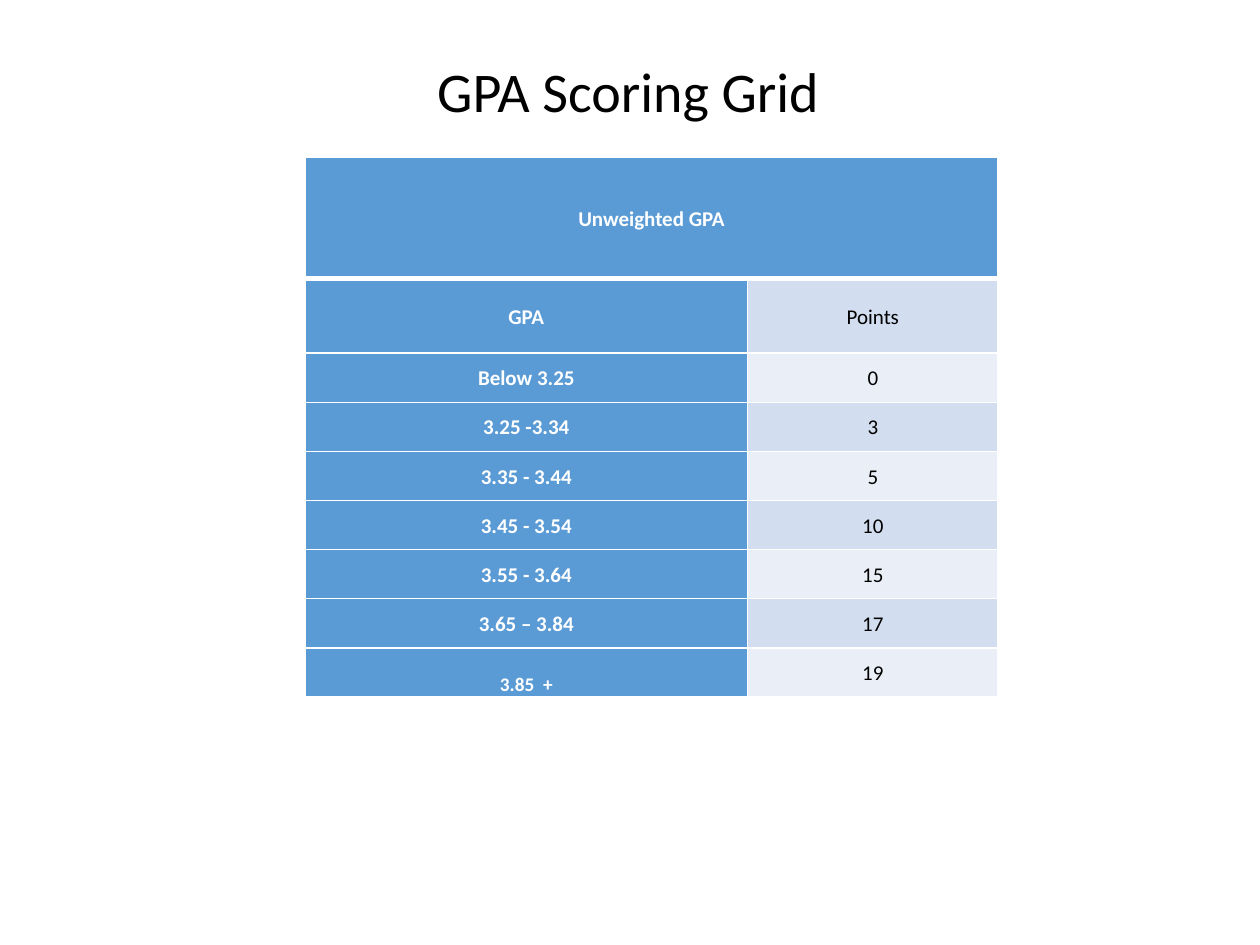
from lxml import etree
from pptx import Presentation, util as u
from pptx.dml.color import RGBColor
from pptx.enum import text
from pptx.oxml import ns

TITLE = "GPA Scoring Grid"
HEAD = "Unweighted GPA"
ROWS = [
    ("GPA", "Points"),
    ("Below 3.25", "0"),
    ("3.25 -3.34", "3"),
    ("3.35 - 3.44", "5"),
    ("3.45 - 3.54", "10"),
    ("3.55 - 3.64", "15"),
    ("3.65 – 3.84", "17"),
    ("3.85  +", "19"),
]
FONT = "Calibri"
BLACK = RGBColor(0, 0, 0)
WHITE = RGBColor(255, 255, 255)
BLUE = RGBColor(0x5B, 0x9B, 0xD5)
BANDS = [RGBColor(0xD2, 0xDE, 0xEF), RGBColor(0xEA, 0xEF, 0xF7)]
WIDTHS = [8.92, 5.05]
HEIGHTS = [2.44, 1.5] + [0.99] * (len(ROWS) - 1)


def write(frame, words, size, color, bold=False):
    par = frame.paragraphs[0]
    par.alignment = text.PP_ALIGN.CENTER
    run = par.add_run()
    run.text = words
    font = run.font
    font.name, font.size, font.bold = FONT, u.Pt(size), bold
    font.color.rgb = color
    return par


def border(cell, top=1, bottom=1):
    props = cell._tc.get_or_add_tcPr()
    sides = [("lnL", 1), ("lnR", 1), ("lnT", top), ("lnB", bottom)]
    for spot, (side, width) in enumerate(sides):
        line = etree.Element(ns.qn("a:" + side), w=str(u.Pt(width)))
        fill = etree.SubElement(line, ns.qn("a:solidFill"))
        etree.SubElement(fill, ns.qn("a:srgbClr"), val=str(WHITE))
        props.insert(spot, line)


def style(cell, words, fill, color, bold, size=12, top=1, bottom=1):
    cell.fill.solid()
    cell.fill.fore_color.rgb = fill
    cell.margin_left = cell.margin_right = u.Cm(0.18)
    cell.margin_top = cell.margin_bottom = 0
    cell.vertical_anchor = text.MSO_ANCHOR.MIDDLE
    par = write(cell.text_frame, words, size, color, bold)
    par.line_spacing = 1.07
    border(cell, top, bottom)


def main():
    prs = Presentation()
    prs.slide_width, prs.slide_height = u.Cm(25.4), u.Cm(19.05)
    slide = prs.slides.add_slide(prs.slide_layouts[5])

    title = slide.shapes.title
    title.left, title.top = u.Cm(1.55), u.Cm(1.02)
    title.width, title.height = u.Cm(22.23), u.Cm(1.63)
    title.text_frame.vertical_anchor = text.MSO_ANCHOR.TOP
    write(title.text_frame, TITLE, 32, BLACK)

    frame = slide.shapes.add_table(
        len(HEIGHTS), len(WIDTHS), u.Cm(6.15), u.Cm(3.18),
        u.Cm(sum(WIDTHS)), u.Cm(sum(HEIGHTS)))
    grid = frame.table
    for col, width in zip(grid.columns, WIDTHS):
        col.width = u.Cm(width)
    for row, height in zip(grid.rows, HEIGHTS):
        row.height = u.Cm(height)

    head = grid.cell(0, 0)
    head.merge(grid.cell(0, 1))
    style(head, HEAD, BLUE, WHITE, True, bottom=3)
    border(grid.cell(0, 1), bottom=3)

    last = len(ROWS)
    for num, (gpa, points) in enumerate(ROWS, 1):
        top = 3 if num == 1 else 1
        size = 11 if num == last else 12
        style(grid.cell(num, 0), gpa, BLUE, WHITE, True, size, top)
        style(grid.cell(num, 1), points, BANDS[(num - 1) % 2], BLACK, False, top=top)
    grid.cell(last, 0).vertical_anchor = text.MSO_ANCHOR.BOTTOM

    prs.save("out.pptx")


if __name__ == "__main__":
    main()
